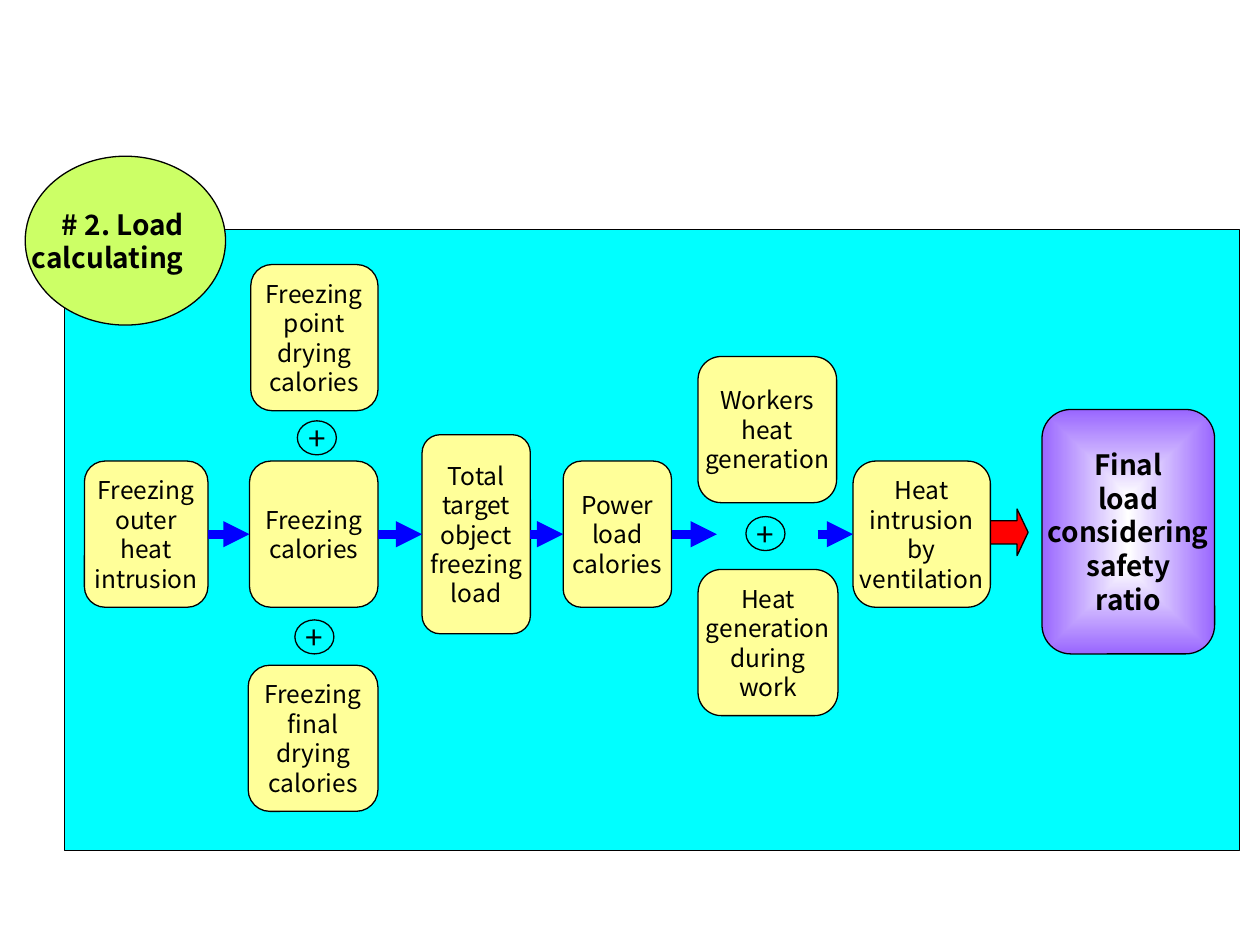
"""Build the load calculating flow slide."""
from lxml.etree import SubElement
from pptx import Presentation
from pptx.dml.color import RGBColor
from pptx.enum.shapes import MSO_CONNECTOR as Link, MSO_SHAPE as Kind
from pptx.enum.text import MSO_ANCHOR as Anchor, PP_ALIGN as Align
from pptx.oxml.ns import qn
from pptx.util import Inches, Pt

FONT = "Noto Sans CJK KR"
BLACK = RGBColor(0, 0, 0)
WHITE = RGBColor(255, 255, 255)
CYAN = RGBColor(0, 255, 255)
LIME = RGBColor(0xCC, 0xFF, 0x66)
CREAM = RGBColor(255, 255, 0x99)
VIOLET = RGBColor(0x99, 0x66, 255)
BLUE = RGBColor(0, 0, 255)
RED = RGBColor(255, 0, 0)

MID = 4.24
TALL = 1.16

TITLE = ["# 2. Load\ncalculating"]
FINAL = ["Final\nload\nconsidering\nsafety\nratio"]
ROW = {
    "outer": (0.67, 0.98, TALL, ["Freezing", "outer\nheat", "intrusion"]),
    "freeze": (1.98, 1.02, TALL, ["Freezing", "calories"]),
    "total": (3.35, 0.86, 1.58,
              ["Total", "target", "object", "freezing", "load"]),
    "power": (4.47, 0.86, TALL, ["Power", "load", "calories"]),
    "vent": (6.77, 1.09, TALL, ["Heat\nintrusion\nby\nventilation"]),
}
SIDE = [
    (1.99, 2.1, 1.01, ["Freezing\npoint\ndrying\ncalories"]),
    (1.97, 5.28, 1.03, ["Freezing\nfinal\ndrying\ncalories"]),
    (5.54, 2.83, 1.1, ["Workers\nheat\ngeneration"]),
    (5.54, 4.52, 1.11, ["Heat\ngeneration\nduring\nwork"]),
]
PLUS = [(2.36, 3.34), (2.34, 4.92), (5.92, 4.1)]
FLOW = [("outer", "freeze"), ("freeze", "total"), ("total", "power"),
        ("power", 5.69), (6.49, "vent")]


def write(shape, paras, size, bold, align):
    frame = shape.text_frame
    frame.word_wrap = False
    frame.vertical_anchor = Anchor.MIDDLE
    for i, para in enumerate(paras):
        p = frame.paragraphs[0] if i == 0 else frame.add_paragraph()
        p.alignment = align
        for j, line in enumerate(para.split("\n")):
            if j:
                p.add_line_break()
            run = p.add_run()
            run.text = line
            font = run.font
            font.name, font.size, font.bold = FONT, Pt(size), bold
            font.color.rgb = BLACK


def draw(kind, box, fill, paras=(), size=14, bold=False, align=Align.CENTER):
    shape = slide.shapes.add_shape(kind, *map(Inches, box))
    shape.shadow.inherit = False
    shape.fill.solid()
    shape.fill.fore_color.rgb = fill
    shape.line.color.rgb = BLACK
    shape.line.width = Pt(0.75)
    if paras:
        write(shape, paras, size, bold, align)
    return shape


def glow(shape, inner, outer):
    shape.fill.gradient()
    for stop, color, place in zip(shape.fill.gradient_stops,
                                  (inner, outer), (0, 1)):
        stop.color.rgb = color
        stop.position = place
    grad = shape.element.spPr.find(qn("a:gradFill"))
    grad.remove(grad.find(qn("a:lin")))
    route = SubElement(grad, qn("a:path"), path="shape")
    SubElement(route, qn("a:fillToRect"),
               {side: "50000" for side in "ltrb"})


def join(start, end):
    xs = [0 if isinstance(x, str) else x for x in (start, end)]
    line = slide.shapes.add_connector(
        Link.STRAIGHT, Inches(xs[0]), Inches(MID), Inches(xs[1]), Inches(MID))
    if start in boxes:
        line.begin_connect(boxes[start], 3)
    if end in boxes:
        line.end_connect(boxes[end], 1)
    line.line.color.rgb = BLUE
    line.line.width = Pt(5)
    SubElement(line.line._get_or_add_ln(), qn("a:tailEnd"), type="triangle")
    SubElement(line.element.spPr, qn("a:effectLst"))


deck = Presentation()
deck.slide_width, deck.slide_height = Inches(10), Inches(7.5)
slide = deck.slides.add_slide(deck.slide_layouts[6])

draw(Kind.RECTANGLE, (0.51, 1.82, 9.33, 4.93), CYAN)
draw(Kind.OVAL, (0.2, 1.24, 1.59, 1.34), LIME, TITLE, 16, True, Align.RIGHT)
red = draw(Kind.NOTCHED_RIGHT_ARROW, (7.81, 4.04, 0.35, 0.37), RED)
red.adjustments[1] = 0.25

boxes = {}
for name, (x, w, h, paras) in ROW.items():
    boxes[name] = draw(Kind.ROUNDED_RECTANGLE, (x, MID - h / 2, w, h),
                       CREAM, paras)
for x, y, w, paras in SIDE:
    draw(Kind.ROUNDED_RECTANGLE, (x, y, w, TALL), CREAM, paras)
for x, y in PLUS:
    draw(Kind.OVAL, (x, y, 0.31, 0.27), CYAN, ["+"], 18)
goal = draw(Kind.ROUNDED_RECTANGLE, (8.27, 3.25, 1.37, 1.94), VIOLET,
            FINAL, 16, True)
glow(goal, WHITE, VIOLET)
for start, end in FLOW:
    join(start, end)

deck.save("out.pptx")
